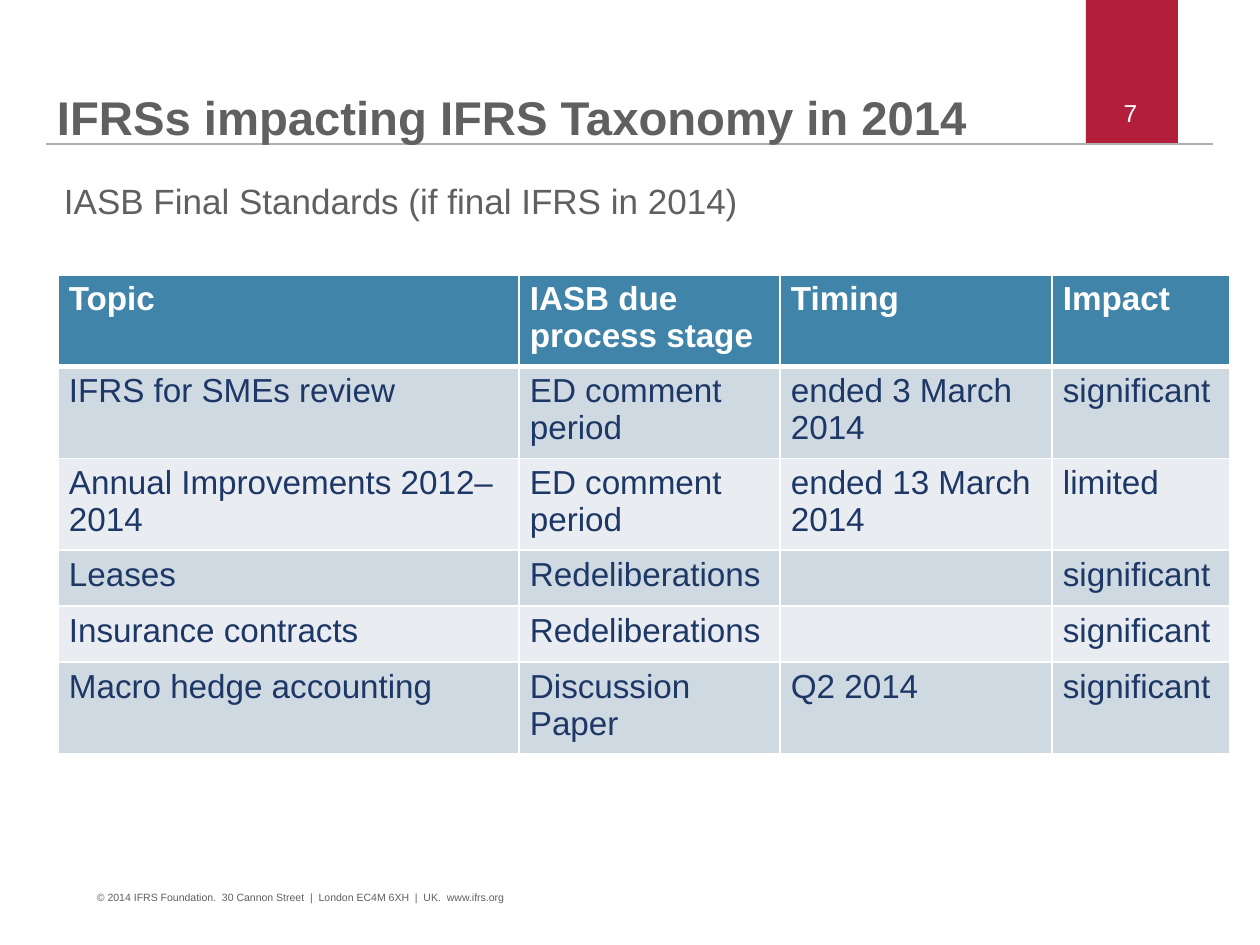
"""Build the slide on IFRSs that affect the IFRS Taxonomy in 2014."""
from lxml.etree import SubElement
from pptx import Presentation
from pptx.dml.color import RGBColor
from pptx.enum.shapes import MSO_CONNECTOR, MSO_SHAPE
from pptx.enum.text import MSO_ANCHOR, PP_ALIGN
from pptx.oxml.ns import qn
from pptx.util import Pt

PX = 914400 / 126
WHITE, GREY, NAVY = "FFFFFF", "5F6062", "1D3766"
RED, RULE_GREY = "B31E3B", "AFAFB0"
HEADER_FILL, BAND_FILLS = "4184A9", ("CFD9E2", "E9EDF1")


def color(hex_code):
    return RGBColor.from_string(hex_code)


def write(frame, text, size, hex_code, bold=False, inset=(0, 0)):
    frame.word_wrap = True
    frame.margin_left = frame.margin_right = round(inset[0] * PX)
    frame.margin_top = frame.margin_bottom = round(inset[1] * PX)
    paragraph = frame.paragraphs[0]
    run = paragraph.add_run()
    run.text = text
    run.font.name = "Arial"
    run.font.size = Pt(size)
    run.font.bold = bold
    run.font.color.rgb = color(hex_code)
    return paragraph


presentation = Presentation()
presentation.slide_width = round(1260 * PX)
presentation.slide_height = round(945 * PX)
slide = presentation.slides.add_slide(presentation.slide_layouts[6])
shapes = slide.shapes

page_tab = shapes.add_shape(
    MSO_SHAPE.RECTANGLE, *(round(n * PX) for n in (1086, 0, 92, 143)))
page_tab.shadow.inherit = False
page_tab.fill.solid()
page_tab.fill.fore_color.rgb = color(RED)
page_tab.line.fill.background()

title_rule = shapes.add_connector(
    MSO_CONNECTOR.STRAIGHT, *(round(n * PX) for n in (46, 144, 1213, 144)))
title_rule.line.color.rgb = color(RULE_GREY)
title_rule.line.width = Pt(1.2)
SubElement(title_rule._element.spPr, qn("a:effectLst"))

texts = [
    ("IFRSs impacting IFRS Taxonomy in 2014", (57, 37, 1062, 109), 27, GREY, True, (0, 0)),
    ("IASB Final Standards (if final IFRS in 2014)", (53, 175, 1172, 53), 20, GREY, False, (11, 5)),
    ("© 2014 IFRS Foundation.  30 Cannon Street  |  London EC4M 6XH  |  UK.  www.ifrs.org",
     (97, 891, 779, 26), 6, GREY, False, (0, 0)),
    ("7", (1087, 98, 87, 28), 14, WHITE, False, (0, 0)),
]
for text, place, size, hex_code, bold, inset in texts:
    box = shapes.add_textbox(*(round(n * PX) for n in place))
    paragraph = write(box.text_frame, text, size, hex_code, bold, inset)
    if bold:
        box.text_frame.vertical_anchor = MSO_ANCHOR.BOTTOM
        paragraph.line_spacing = 0.9
    if text == "7":
        paragraph.alignment = PP_ALIGN.CENTER

standards = [
    ("Topic", "IASB due process stage", "Timing", "Impact"),
    ("IFRS for SMEs review", "ED comment period", "ended 3 March 2014", "significant"),
    ("Annual Improvements 2012–2014", "ED comment period", "ended 13 March 2014", "limited"),
    ("Leases", "Redeliberations", "", "significant"),
    ("Insurance contracts", "Redeliberations", "", "significant"),
    ("Macro hedge accounting", "Discussion Paper", "Q2 2014", "significant"),
]
column_widths = (461, 261, 272, 178)
row_heights = [90] + [56] * 5
table = shapes.add_table(
    len(standards), len(column_widths), round(58 * PX), round(275 * PX),
    round(sum(column_widths) * PX), round(sum(row_heights) * PX)).table
for column, width in zip(table.columns, column_widths):
    column.width = round(width * PX)

for row_index, topic_row in enumerate(standards):
    table.rows[row_index].height = round(row_heights[row_index] * PX)
    is_header = row_index == 0
    for column_index, text in enumerate(topic_row):
        cell = table.cell(row_index, column_index)
        properties = cell._tc.get_or_add_tcPr()
        for side in "LRTB":
            thick = (is_header and side == "B") or (row_index == 1 and side == "T")
            border = SubElement(properties, qn(f"a:ln{side}"), w=str(Pt(3 if thick else 1)))
            border_fill = SubElement(border, qn("a:solidFill"))
            SubElement(border_fill, qn("a:srgbClr"), val=WHITE)
        cell.fill.solid()
        cell.fill.fore_color.rgb = color(
            HEADER_FILL if is_header else BAND_FILLS[(row_index - 1) % 2])
        cell.margin_left = cell.margin_right = round(11 * PX)
        cell.margin_top = cell.margin_bottom = round(6 * PX)
        if text:
            run = cell.text_frame.paragraphs[0].add_run()
            run.text = text
            run.font.name = "Arial"
            run.font.size = Pt(19)
            run.font.bold = is_header
            run.font.color.rgb = color(WHITE if is_header else NAVY)

presentation.save("out.pptx")
